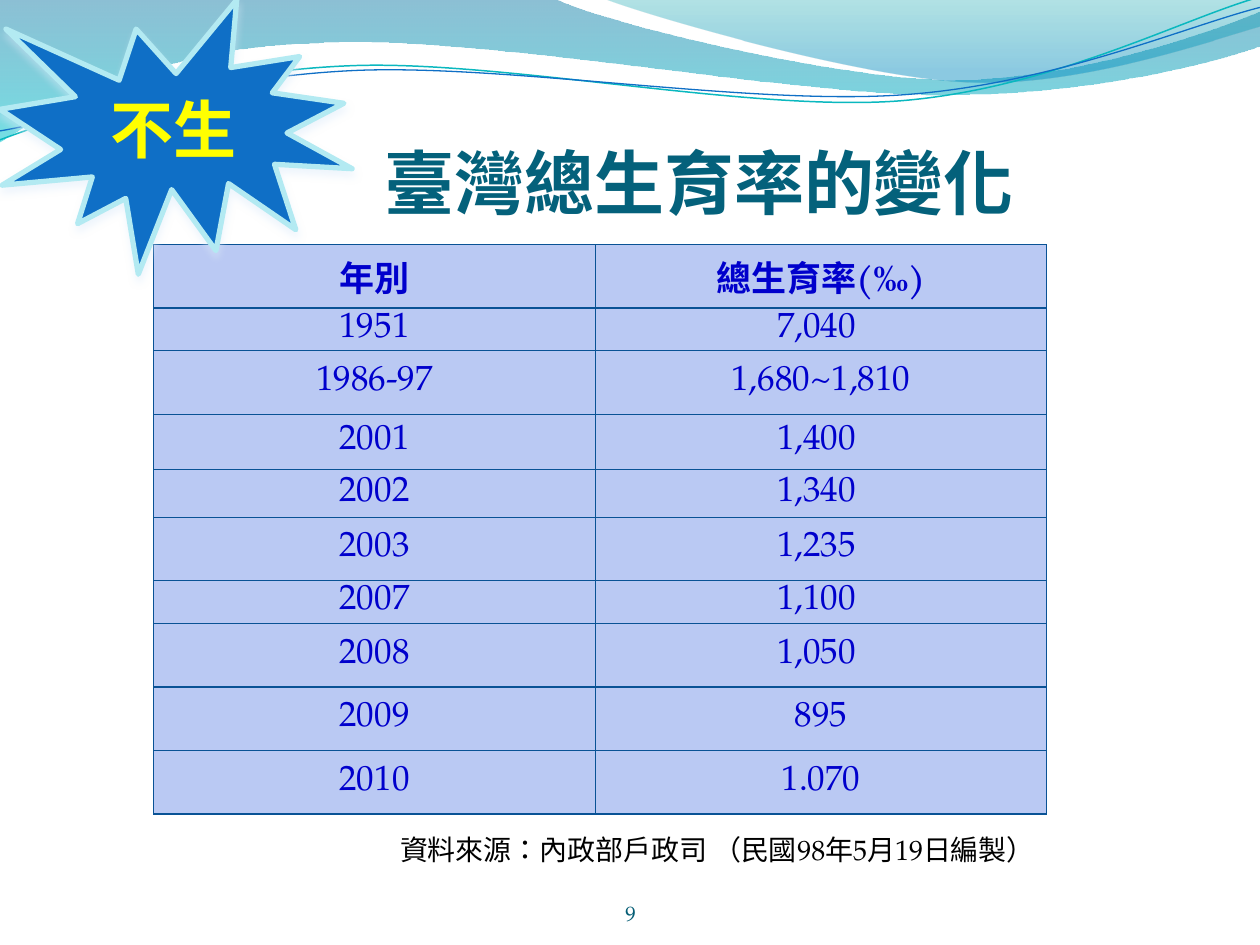
"""Build the slide on Taiwan's total fertility rate, with its wave header and rate table."""
from dataclasses import dataclass
from typing import Any

from lxml.etree import SubElement
from pptx import Presentation
from pptx.dml.color import RGBColor as Rgb
from pptx.enum.shapes import MSO_SHAPE as Preset
from pptx.enum.text import MSO_ANCHOR as Anchor, MSO_AUTO_SIZE as AutoSize, PP_ALIGN as Align
from pptx.oxml import parse_xml
from pptx.oxml.ns import nsdecls, qn
from pptx.util import Cm, Pt

COLORS = {
    "title": "04617B", "number": "045D75", "source": "000000",
    "cell": "BAC9F3", "cell_text": "0000CC", "border": "095295",
    "burst": "0F6FC6", "burst_edge": "B3EAF2", "burst_text": "FFFF00", "glow": "DCEBFA",
    "blue": "0074A1", "cyan": "00C6CF", "teal": "00A1A9", "sky": "008BBF",
    "teal_line": "0AB8BF", "blue_line": "0F6FC6",
}
BODY_FONT = "TeX Gyre Pagella"
CJK_FONT = "Noto Sans CJK SC"
RIPPLE_ROTATION = 357.3
Point = tuple[float, float]


@dataclass(frozen=True)
class GradientStop:
    position: float
    color: str
    opacity: int


@dataclass(frozen=True)
class Outline:
    start: Point
    segments: tuple[tuple[Point, ...], ...]


@dataclass(frozen=True)
class Wave:
    outline: Outline
    stops: tuple[GradientStop, GradientStop]


@dataclass(frozen=True)
class Ripple:
    outline: Outline
    color: str
    width: float


@dataclass(frozen=True)
class RateRow:
    year: str
    rate: str
    height: float


@dataclass(frozen=True)
class TextStyle:
    size: float
    color: str
    font: str = BODY_FONT
    bold: bool = False
    align: Align = Align.CENTER


WAVES = (
    Wave(Outline((0, 0), (
        ((11.18, -0.03),),
        ((12.09, 0.43), (16.87, 1.6), (19.25, 1.6)),
        ((21.67, 1.6), (24.33, 0.66), (25.4, 0.23)),
        ((25.43, 0.91),),
        ((24.97, 1.12), (22.1, 1.93), (18.95, 1.91)),
        ((15.8, 1.91), (9.7, 0.71), (6.53, 0.86)),
        ((3.28, 0.91), (1.17, 2.11), (-0.03, 2.87)),
    )), (GradientStop(0, "blue", 45), GradientStop(1, "cyan", 55))),
    Wave(Outline((12.17, -0.03), (
        ((12.93, 0.28), (17.32, 1.57), (19.53, 1.65)),
        ((21.74, 1.75), (24.41, 0.81), (25.4, 0.53)),
        ((25.4, 0),),
    )), (GradientStop(0, "teal", 30), GradientStop(0.8, "sky", 45))),
)
RIPPLES = (
    Ripple(Outline((-0.05, 2.22), (
        ((1.19, 1.82), (4.02, 1.04), (7.05, 1.06)),
        ((10.05, 1.07), (15.02, 2.37), (18.08, 2.29)),
        ((21.13, 2.2), (23.87, 0.91), (25.41, 0.55)),
    )), "teal_line", 0.85),
    Ripple(Outline((-0.04, 2.04), (
        ((1.16, 1.9), (4.18, 1.15), (7.2, 1.16)),
        ((10.25, 1.18), (15.13, 2.25), (18.19, 2.17)),
        ((21.21, 2.1), (23.93, 1.06), (25.45, 0.75)),
    )), "blue_line", 0.75),
)
RATES = (
    RateRow("年別", "總生育率(‰)", 1.14),
    RateRow("1951", "7,040 ", 0.86),
    RateRow("1986-97", "1,680~1,810", 1.28),
    RateRow("2001", "1,400 ", 1.11),
    RateRow("2002", "1,340 ", 0.97),
    RateRow("2003", "1,235 ", 1.28),
    RateRow("2007", "1,100 ", 0.86),
    RateRow("2008", "1,050 ", 1.28),
    RateRow("2009", "895", 1.28),
    RateRow("2010", "1.070", 1.28),
)
COLUMN_WIDTHS = (8.9, 9.1)
NO_MARGINS = dict.fromkeys(("margin_left", "margin_top", "margin_right", "margin_bottom"), 0)


def rgb(name: str) -> Rgb:
    return Rgb.from_string(COLORS[name])


def apply(target: Any, values: dict[str, Any]) -> None:
    for name, value in values.items():
        setattr(target, name, value)


def write(frame: Any, text: str, style: TextStyle) -> None:
    paragraph = frame.paragraphs[0]
    paragraph.alignment = style.align
    run = paragraph.add_run()
    run.text = text
    apply(run.font, {"size": Pt(style.size), "bold": style.bold, "name": style.font})
    run.font.color.rgb = rgb(style.color)
    run.font._element.set("lang", "zh-TW")
    SubElement(run.font._element, qn("a:ea"), typeface=CJK_FONT)


def draw_outline(shapes: Any, outline: Outline, close: bool) -> Any:
    points = [point for segment in outline.segments for point in segment]
    builder = shapes.build_freeform(*map(Cm, outline.start))
    builder.add_line_segments([(Cm(x), Cm(y)) for x, y in points], close=close)
    shape = builder.convert_to_shape()
    shape.shadow.inherit = False
    steps = iter(list(shape._element.iter(qn("a:lnTo"))))
    for segment in outline.segments:
        lines = [next(steps) for _ in segment]
        if len(lines) == 3:
            curve = parse_xml(f'<a:cubicBezTo {nsdecls("a")}/>')
            lines[0].addprevious(curve)
            for line in lines:
                curve.append(line[0])
                line.getparent().remove(line)
    return shape


def draw_wave(shapes: Any, wave: Wave) -> None:
    shape = draw_outline(shapes, wave.outline, True)
    shape.line.fill.background()
    shape.fill.gradient()
    shape.fill.gradient_angle = 270
    for stop, shade in zip(shape.fill.gradient_stops, wave.stops):
        stop.position = shade.position
        stop.color.rgb = rgb(shade.color)
        color = stop._gs.find(qn("a:srgbClr"))
        SubElement(color, qn("a:alpha"), val=str(shade.opacity * 1000))


def draw_ripple(shapes: Any, ripple: Ripple) -> None:
    shape = draw_outline(shapes, ripple.outline, False)
    shape.rotation = RIPPLE_ROTATION
    shape.fill.background()
    shape.line.color.rgb = rgb(ripple.color)
    shape.line.width = Pt(ripple.width)


def draw_cell(cell: Any, text: str, header: bool) -> None:
    apply(cell, {"vertical_anchor": Anchor.MIDDLE, **({} if header else NO_MARGINS)})
    write(cell.text_frame, text, TextStyle(20, "cell_text", bold=header))
    properties = cell._tc.get_or_add_tcPr()
    for side in "LRTB":
        properties.append(parse_xml(
            f'<a:ln{side} {nsdecls("a")} w="{Pt(0.75)}"><a:solidFill>'
            f'<a:srgbClr val="{COLORS["border"]}"/></a:solidFill></a:ln{side}>'))
    cell.fill.solid()
    cell.fill.fore_color.rgb = rgb("cell")


def draw_rates(shapes: Any) -> None:
    height = sum(row.height for row in RATES)
    table = shapes.add_table(len(RATES), len(COLUMN_WIDTHS), Cm(3.1), Cm(4.93),
                             Cm(sum(COLUMN_WIDTHS)), Cm(height)).table
    apply(table, {"first_row": False, "horz_banding": False})
    for column, width in zip(table.columns, COLUMN_WIDTHS):
        column.width = Cm(width)
    for index, rate in enumerate(RATES):
        table.rows[index].height = Cm(rate.height)
        for cell, text in zip(table.rows[index].cells, (rate.year, rate.rate)):
            draw_cell(cell, text, index == 0)


def draw_burst(shapes: Any) -> None:
    burst = shapes.add_shape(Preset.EXPLOSION1, 0, 0, Cm(7.1), Cm(5.53))
    burst.shadow.inherit = False
    burst.fill.solid()
    burst.fill.fore_color.rgb = rgb("burst")
    burst.line.color.rgb = rgb("burst_edge")
    burst.line.width = Pt(3)
    glow = SubElement(burst._element.spPr.find(qn("a:effectLst")), qn("a:outerShdw"),
                      blurRad=str(Pt(4.5)), dist=str(Pt(3)), dir="5400000", rotWithShape="0")
    tint = SubElement(glow, qn("a:srgbClr"), val=COLORS["glow"])
    SubElement(tint, qn("a:alpha"), val="48000")
    burst.text_frame.vertical_anchor = Anchor.MIDDLE
    write(burst.text_frame, "不生", TextStyle(36, "burst_text", CJK_FONT, True))


def main() -> None:
    deck = Presentation()
    apply(deck, {"slide_width": Cm(25.4), "slide_height": Cm(19.05)})
    shapes = deck.slides.add_slide(deck.slide_layouts[5]).shapes
    for wave in WAVES:
        draw_wave(shapes, wave)
    ripple_group = shapes.add_group_shape()
    for ripple in RIPPLES:
        draw_ripple(ripple_group.shapes, ripple)

    title = shapes.title
    shapes.element.append(title.element)
    apply(title, {"left": Cm(3.3), "top": Cm(1.32), "width": Cm(21.59), "height": Cm(3.18)})
    apply(title.text_frame, {**NO_MARGINS, "margin_top": Cm(0.13), "word_wrap": True,
                             "auto_size": AutoSize.NONE, "vertical_anchor": Anchor.BOTTOM})
    write(title.text_frame, "臺灣總生育率的變化", TextStyle(40, "title", "Calibri", True))

    draw_rates(shapes)
    number = shapes.add_textbox(Cm(8.69), Cm(17.35), Cm(8.05), Cm(1.32)).text_frame
    apply(number, {**NO_MARGINS, "word_wrap": True, "vertical_anchor": Anchor.BOTTOM})
    write(number, "9", TextStyle(12, "number"))
    source = shapes.add_textbox(Cm(2.31), Cm(16.66), Cm(18.8), Cm(0.94)).text_frame
    apply(source, {"word_wrap": True, "auto_size": AutoSize.SHAPE_TO_FIT_TEXT})
    write(source, "資料來源：內政部戶政司 （民國98年5月19日編製）",
          TextStyle(16, "source", align=Align.RIGHT))
    draw_burst(shapes)
    deck.save("out.pptx")


if __name__ == "__main__":
    main()
